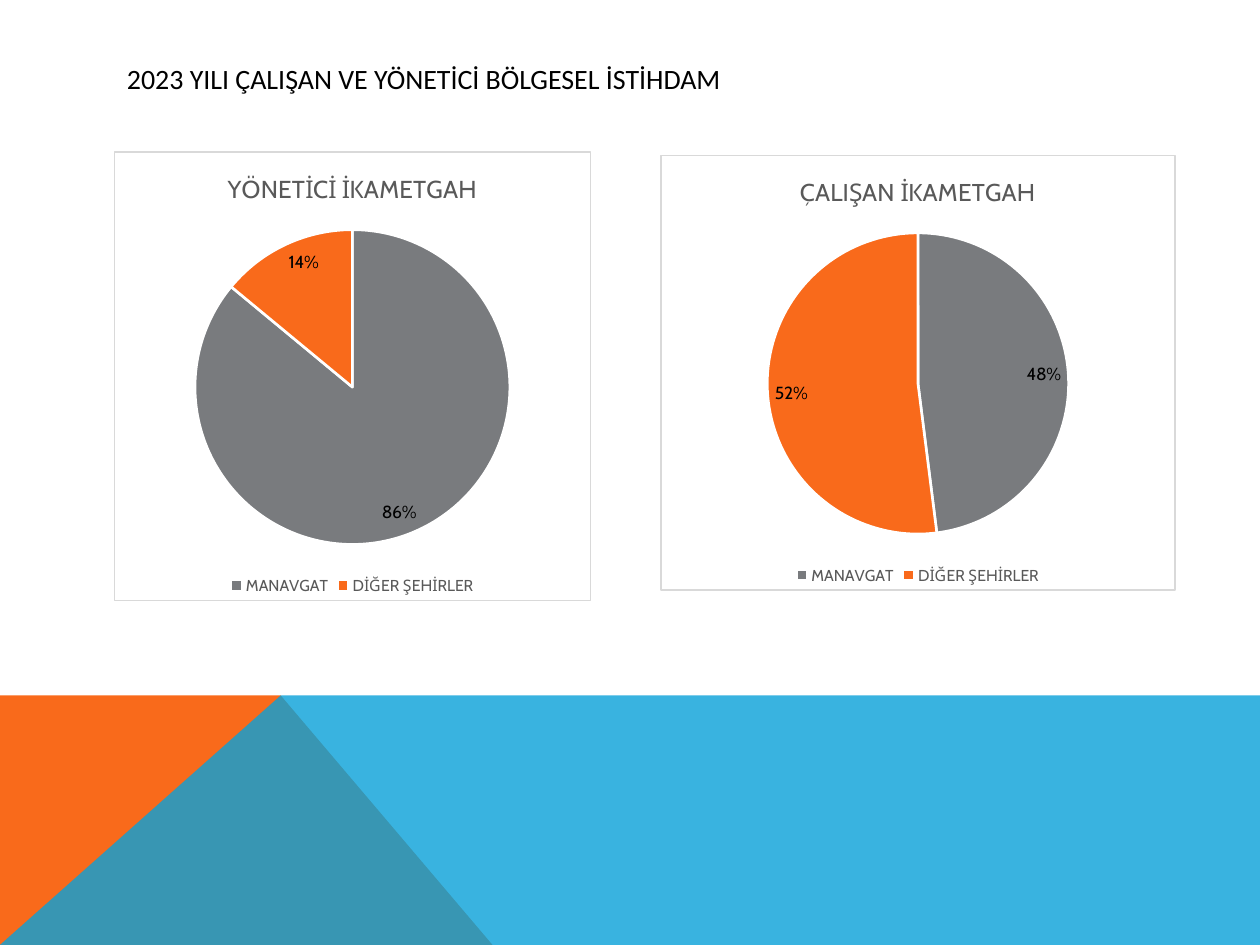
from dataclasses import dataclass

from lxml import etree
from pptx import Presentation
from pptx.chart.data import CategoryChartData
from pptx.dml.color import RGBColor
from pptx.enum.chart import XL_CHART_TYPE, XL_LABEL_POSITION, XL_LEGEND_POSITION
from pptx.enum.text import MSO_ANCHOR
from pptx.oxml import parse_xml
from pptx.oxml.ns import nsdecls, qn
from pptx.util import Cm, Pt

PIE = XL_CHART_TYPE.PIE
BOTTOM = XL_LEGEND_POSITION.BOTTOM
INSIDE_END = XL_LABEL_POSITION.INSIDE_END
MIDDLE = MSO_ANCHOR.MIDDLE


@dataclass(frozen=True)
class Theme:
    orange: str = "F96A1B"
    blue: str = "08A1D9"
    gray: str = "797B7E"
    white: str = "FFFFFF"
    black: str = "000000"
    muted: str = "595959"
    border: str = "D9D9D9"
    title_font: str = "Calibri"
    chart_font: str = "Cabin"
    title_size: float = 16
    chart_title_size: float = 14
    label_size: float = 10
    legend_size: float = 9
    blue_alpha: int = 80


THEME = Theme()
SLIDE_W, SLIDE_H = 25.4, 19.05
BAND_TOP, PEAK_X, BASE_X = 14.02, 5.66, 9.93
CATEGORIES = ("MANAVGAT", "DİĞER ŞEHİRLER")
CHARTS = (
    ("YÖNETİCİ İKAMETGAH", (86, 14), (2.29, 3.05, 9.63, 9.07)),
    ("ÇALIŞAN İKAMETGAH", (48, 52), (13.31, 3.12, 10.39, 8.79)),
)


def rgb(color):
    return RGBColor.from_string(color)


def format_font(font, name, size, color):
    values = {"name": name, "size": Pt(size), "bold": False}
    for key, value in values.items():
        setattr(font, key, value)
    font.color.rgb = rgb(color)


def add_polygon(slide, points, color, alpha=None):
    (x, y), *rest = [(Cm(x), Cm(y)) for x, y in points]
    builder = slide.shapes.build_freeform(x, y)
    builder.add_line_segments(rest, close=True)
    sp = builder.convert_to_shape()
    sp.shadow.inherit = False
    sp.fill.solid()
    sp.fill.fore_color.rgb = rgb(color)
    sp.line.fill.background()
    if alpha is not None:
        clr = sp.element.spPr.find(qn("a:solidFill")).find(qn("a:srgbClr"))
        etree.SubElement(clr, qn("a:alpha")).set("val", str(alpha * 1000))


def add_title(slide, text, box):
    tf = slide.shapes.add_textbox(*map(Cm, box)).text_frame
    for key, value in {"word_wrap": True, "vertical_anchor": MIDDLE}.items():
        setattr(tf, key, value)
    r = tf.paragraphs[0].add_run()
    r.text = text
    format_font(r.font, THEME.title_font, THEME.title_size, THEME.black)


def frame_chart(chart):
    frame = parse_xml(
        f'<c:spPr {nsdecls("c", "a")}>'
        f'<a:solidFill><a:srgbClr val="{THEME.white}"/></a:solidFill>'
        f'<a:ln w="{Pt(0.75)}"><a:solidFill><a:srgbClr val="{THEME.border}"/>'
        "</a:solidFill></a:ln></c:spPr>"
    )
    chart.element.find(qn("c:chart")).addnext(frame)


def add_pie(slide, title, shares, box):
    data = CategoryChartData()
    data.categories = CATEGORIES
    data.add_series("Series 1", shares)
    chart = slide.shapes.add_chart(PIE, *map(Cm, box), data).chart
    format_font(chart.font, THEME.chart_font, THEME.label_size, THEME.black)
    frame_chart(chart)

    chart.has_title = True
    chart.chart_title.include_in_layout = False
    r = chart.chart_title.text_frame.paragraphs[0].add_run()
    r.text = title
    format_font(r.font, THEME.chart_font, THEME.chart_title_size, THEME.muted)

    chart.has_legend = True
    for key, value in {"position": BOTTOM, "include_in_layout": False}.items():
        setattr(chart.legend, key, value)
    format_font(chart.legend.font, THEME.chart_font, THEME.legend_size, THEME.muted)

    plot = chart.plots[0]
    plot.vary_by_categories = True
    plot.has_data_labels = True
    labels = plot.data_labels
    values = {
        "show_percentage": True,
        "show_value": False,
        "number_format": "0%",
        "number_format_is_linked": False,
        "position": INSIDE_END,
    }
    for key, value in values.items():
        setattr(labels, key, value)
    format_font(labels.font, THEME.chart_font, THEME.label_size, THEME.black)

    for i, color in enumerate((THEME.gray, THEME.orange)):
        fmt = plot.series[0].points[i].format
        fmt.fill.solid()
        fmt.fill.fore_color.rgb = rgb(color)
        fmt.line.color.rgb = rgb(THEME.white)
        fmt.line.width = Pt(1.5)


def main():
    prs = Presentation()
    prs.slide_width, prs.slide_height = Cm(SLIDE_W), Cm(SLIDE_H)
    slide = prs.slides.add_slide(prs.slide_layouts[6])
    corner, peak = (0, SLIDE_H), (PEAK_X, BAND_TOP)
    add_polygon(
        slide, (corner, (0, BAND_TOP), peak, (BASE_X, SLIDE_H)), THEME.orange
    )
    add_polygon(
        slide,
        (corner, peak, (SLIDE_W, BAND_TOP), (SLIDE_W, SLIDE_H)),
        THEME.blue,
        THEME.blue_alpha,
    )
    add_title(
        slide,
        "2023 YILI ÇALIŞAN VE YÖNETİCİ BÖLGESEL İSTİHDAM",
        (2.31, 1.02, 20.88, 1.12),
    )
    for title, shares, box in CHARTS:
        add_pie(slide, title, shares, box)
    prs.save("out.pptx")


if __name__ == "__main__":
    main()
